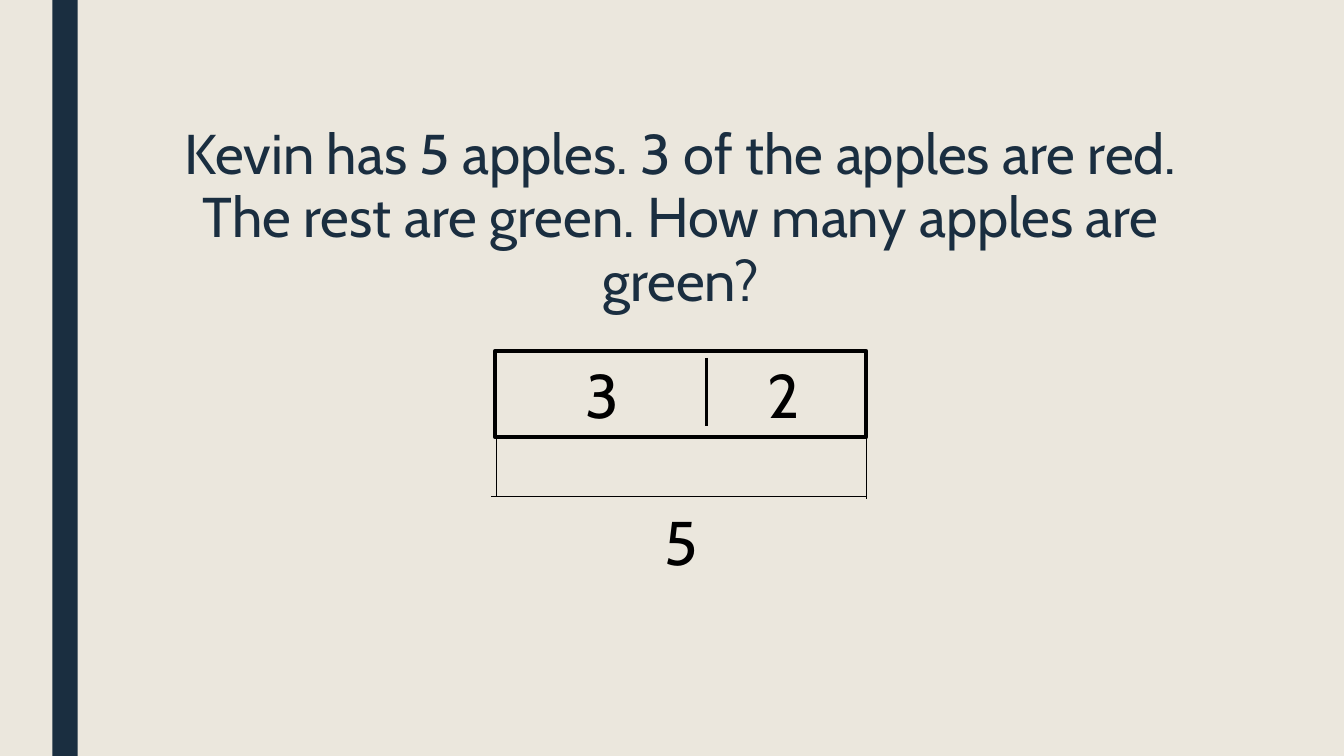
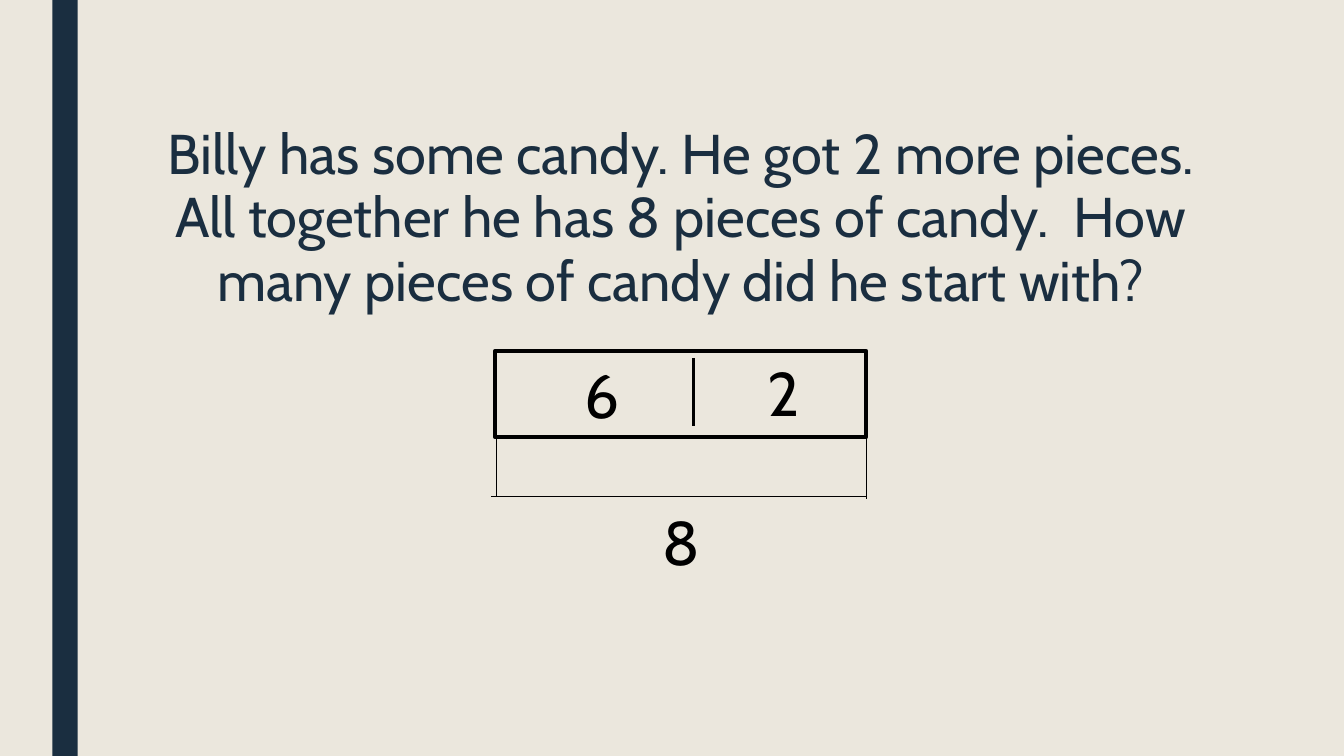
from dataclasses import dataclass

from lxml.etree import SubElement
from pptx import Presentation
from pptx.dml.color import RGBColor
from pptx.enum.shapes import MSO_CONNECTOR, MSO_SHAPE
from pptx.enum.text import MSO_ANCHOR, MSO_AUTO_SIZE, PP_ALIGN
from pptx.oxml.ns import qn
from pptx.presentation import Presentation as Deck
from pptx.slide import Slide
from pptx.text.text import _Paragraph as Paragraph
from pptx.util import Inches, Pt


@dataclass(frozen=True)
class Theme:
    paper: RGBColor = RGBColor(0xEB, 0xE7, 0xDD)
    navy: RGBColor = RGBColor(0x1A, 0x2E, 0x40)
    ink: RGBColor = RGBColor(0, 0, 0)
    font: str = "Cabin"
    question_size: float = 40
    number_size: float = 44
    bar_line: float = 2.75
    divider_line: float = 2.25
    bracket_line: float = 0.5


@dataclass(frozen=True)
class Problem:
    """A word problem and the bar model that solves it."""
    question: str
    first_part: int
    second_part: int
    divider_left: float
    second_part_top: float = 3.49

    @property
    def total(self) -> int:
        return self.first_part + self.second_part


THEME = Theme()
SLIDE_WIDTH, SLIDE_HEIGHT = 13.33, 7.5
BAR_LEFT, BAR_TOP, BAR_WIDTH, BAR_HEIGHT = 4.91, 3.48, 3.68, 0.86
BAR_RIGHT = BAR_LEFT + BAR_WIDTH
BRACKET_LEFT, BRACKET_BOTTOM, BRACKET_HEIGHT = 4.92, 4.92, 0.6
NUMBER_WIDTH, NUMBER_HEIGHT = 1.07, 0.84

PROBLEMS = (
    Problem(
        "Kevin has 5 apples. 3 of the apples are red. The rest are green. "
        "How many apples are green?",
        first_part=3, second_part=2, divider_left=7.01,
    ),
    Problem(
        "Billy has some candy. He got 2 more pieces. All together he has "
        "8 pieces of candy.  How many pieces of candy did he start with?",
        first_part=6, second_part=2, divider_left=6.88, second_part_top=3.47,
    ),
)


def style_paragraph(para: Paragraph, size: float, color: RGBColor) -> None:
    para.alignment = PP_ALIGN.CENTER
    para.font.name = THEME.font
    para.font.size = Pt(size)
    para.font.color.rgb = color


def set_background(deck: Deck) -> None:
    fill = deck.slide_master.background.fill
    fill.solid()
    fill.fore_color.rgb = THEME.paper


def add_side_band(slide: Slide) -> None:
    band = slide.shapes.add_shape(
        MSO_SHAPE.RECTANGLE, Inches(0.52), Inches(0),
        Inches(0.25), Inches(SLIDE_HEIGHT))
    band.shadow.inherit = False
    band.fill.solid()
    band.fill.fore_color.rgb = THEME.navy
    band.line.fill.background()


def add_question(slide: Slide, question: str) -> None:
    title = slide.shapes.title
    title.element.getparent().remove(title.element)
    body = slide.placeholders[1]
    body.left, body.top = Inches(1.5), Inches(1.17)
    body.width, body.height = Inches(10.5), Inches(5.24)
    frame = body.text_frame
    frame.auto_size = MSO_AUTO_SIZE.NONE
    frame.vertical_anchor = MSO_ANCHOR.TOP
    frame.text = question
    para = frame.paragraphs[0]
    para.line_spacing = 0.95
    para.space_before, para.space_after = Pt(10), Pt(2)
    properties = para._p.get_or_add_pPr()
    properties.set("marL", "0")
    properties.set("indent", "0")
    SubElement(properties, qn("a:buNone"))
    style_paragraph(para, THEME.question_size, THEME.navy)


def add_line(slide: Slide, start: tuple[float, float],
             end: tuple[float, float], width: float) -> None:
    line = slide.shapes.add_connector(
        MSO_CONNECTOR.STRAIGHT, *map(Inches, start + end))
    line.line.color.rgb = THEME.ink
    line.line.width = Pt(width)
    SubElement(line.element.spPr, qn("a:effectLst"))


def add_number(slide: Slide, number: int, left: float, top: float) -> None:
    box = slide.shapes.add_textbox(
        Inches(left), Inches(top), Inches(NUMBER_WIDTH), Inches(NUMBER_HEIGHT))
    frame = box.text_frame
    frame.word_wrap = True
    frame.auto_size = MSO_AUTO_SIZE.SHAPE_TO_FIT_TEXT
    frame.text = str(number)
    style_paragraph(frame.paragraphs[0], THEME.number_size, THEME.ink)


def add_bar_model(slide: Slide, problem: Problem) -> None:
    """Draw the divided bar, the bracket below it and the three numbers."""
    bar = slide.shapes.add_shape(
        MSO_SHAPE.RECTANGLE, Inches(BAR_LEFT), Inches(BAR_TOP),
        Inches(BAR_WIDTH), Inches(BAR_HEIGHT))
    bar.shadow.inherit = False
    bar.fill.background()
    bar.line.color.rgb = THEME.ink
    bar.line.width = Pt(THEME.bar_line)

    add_line(slide, (problem.divider_left, 3.55), (problem.divider_left, 4.23),
             THEME.divider_line)
    for left, top in ((BRACKET_LEFT, 4.33), (BAR_RIGHT, 4.35)):
        add_line(slide, (left, top), (left, top + BRACKET_HEIGHT),
                 THEME.bracket_line)
    add_line(slide, (BAR_RIGHT, BRACKET_BOTTOM), (4.87, BRACKET_BOTTOM),
             THEME.bracket_line)

    add_number(slide, problem.first_part, 5.44, 3.49)
    add_number(slide, problem.second_part, 7.24, problem.second_part_top)
    add_number(slide, problem.total, 6.22, 4.95)


def main() -> None:
    deck = Presentation()
    deck.slide_width = Inches(SLIDE_WIDTH)
    deck.slide_height = Inches(SLIDE_HEIGHT)
    set_background(deck)
    content_layout = deck.slide_layouts[1]
    for problem in PROBLEMS:
        slide = deck.slides.add_slide(content_layout)
        add_side_band(slide)
        add_question(slide, problem.question)
        add_bar_model(slide, problem)
    deck.save("out.pptx")


if __name__ == "__main__":
    main()
